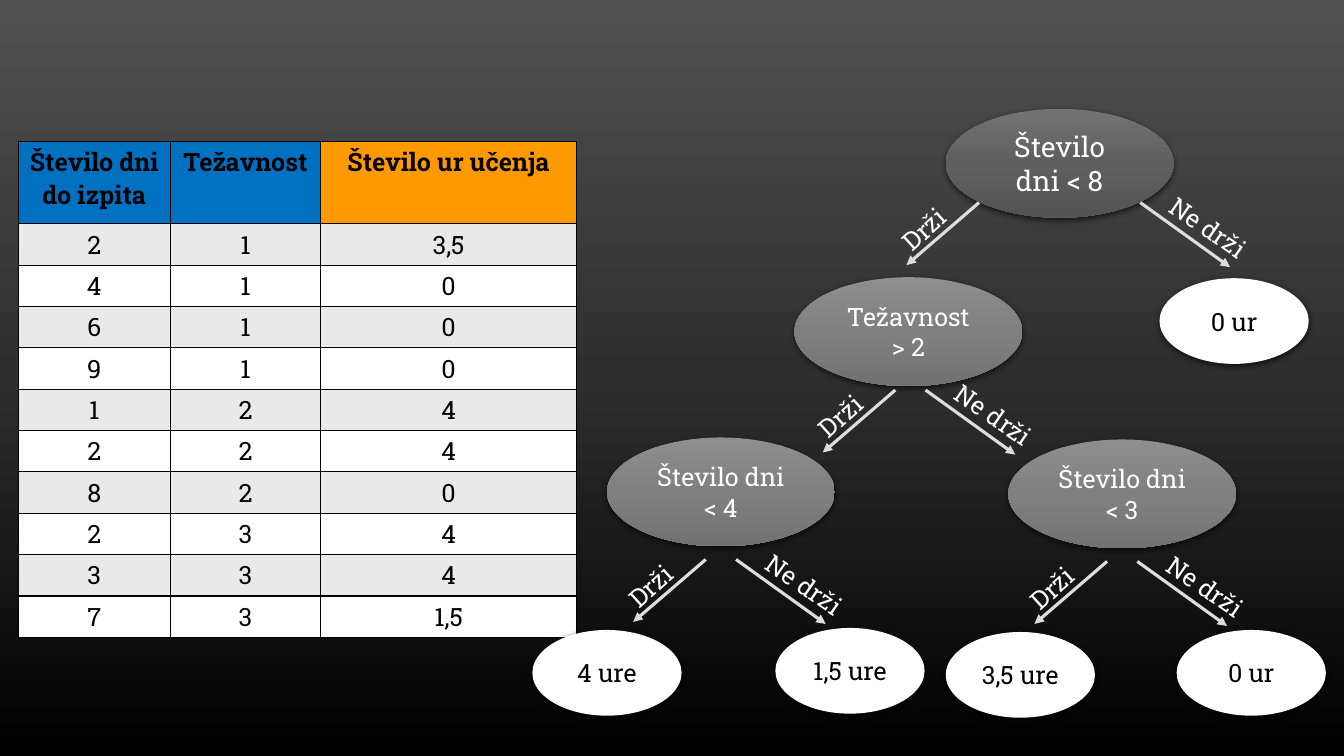
from copy import deepcopy

from lxml import etree
from pptx import Presentation
from pptx.dml.color import RGBColor
from pptx.enum.shapes import MSO_CONNECTOR as LINE, MSO_SHAPE as SHAPE
from pptx.enum.text import MSO_ANCHOR as ANCHOR, MSO_AUTO_SIZE as AUTO, PP_ALIGN as ALIGN
from pptx.oxml import parse_xml
from pptx.oxml.ns import nsdecls, qn
from pptx.util import Inches, Pt

rgb = RGBColor.from_string


def paint_gradient(fill, element, colors):
    """Three-stop gradient from top to bottom."""
    fill.gradient()
    fill.gradient_angle = 270
    stops = next(element.iter(qn("a:gsLst")))
    stops.insert(1, deepcopy(stops[0]))
    for stop, position, color in zip(fill.gradient_stops, (0, 0.5, 1), colors):
        stop.position = position
        stop.color.rgb = rgb(color)


def write(frame, text, color, size=18, align=ALIGN.CENTER, bold=False):
    paragraph = frame.paragraphs[0]
    paragraph.text = text
    paragraph.alignment = align
    font = paragraph.font
    font.name, font.size, font.bold = "Roboto Slab", Pt(size), bold
    font.color.rgb = rgb(color)


deck = Presentation()
deck.slide_width, deck.slide_height = Inches(13.33), Inches(7.5)
slide = deck.slides.add_slide(deck.slide_layouts[6])
paint_gradient(slide.background.fill, slide.element, ("515151", "2E2E2E", "000000"))

# Training data: days to exam, difficulty, hours of study
samples = [
    ("Število dni do izpita", "Težavnost", "Število ur učenja"),
    ("2", "1", "3,5"), ("4", "1", "0"), ("6", "1", "0"), ("9", "1", "0"),
    ("1", "2", "4"), ("2", "2", "4"), ("8", "2", "0"),
    ("2", "3", "4"), ("3", "3", "4"), ("7", "3", "1,5"),
]
header_fills = ("0070C0", "0070C0", "FF9900")
table = slide.shapes.add_table(len(samples), 3, Inches(0.18), Inches(1.4),
                               Inches(5.54), Inches(4.42)).table
for column, width in zip(table.columns, (1.51, 1.49, 2.54)):
    column.width = Inches(width)
for r, sample in enumerate(samples):
    table.rows[r].height = Inches(0.36 if r else 0.82)
    for c, value in enumerate(sample):
        cell = table.cell(r, c)
        cell.margin_left = cell.margin_right = Inches(0.04)
        cell.margin_top = cell.margin_bottom = Inches(0.04)
        write(cell.text_frame, value, "000000", bold=r == 0)
        cell.fill.solid()
        cell.fill.fore_color.rgb = rgb(("FFFFFF", "E9E9E9")[r % 2] if r else header_fills[c])
        for i, side in enumerate("LRTB"):
            cell._tc.get_or_add_tcPr().insert(i, parse_xml(
                f'<a:ln{side} {nsdecls("a")} w="12700"><a:solidFill>'
                f'<a:srgbClr val="000000"/></a:solidFill></a:ln{side}>'))

# Tree nodes: text, left, top; questions are grey, answers white
question_size, answer_size = (2.26, 1.08), (1.48, 0.85)
root_greys = ("737373", "5F5F5F", "545454")
inner_greys = ("8E8E8E", "808080", "727272")
nodes = [
    ("Število dni < 8", 9.38, 1.08, root_greys),
    ("Težavnost > 2", 7.88, 2.75, inner_greys),
    ("Število dni < 4", 6.02, 4.34, inner_greys),
    ("Število dni < 3", 10, 4.36, inner_greys),
    ("4 ure", 5.28, 6.25, None),
    ("1,5 ure", 7.69, 6.23, None),
    ("3,5 ure", 9.38, 6.27, None),
    ("0 ur", 11.67, 6.25, None),
    ("0 ur", 11.5, 2.76, None),
]
for text, left, top, greys in nodes:
    width, height = question_size if greys else answer_size
    node = slide.shapes.add_shape(SHAPE.OVAL, Inches(left), Inches(top),
                                  Inches(width), Inches(height))
    if greys:
        paint_gradient(node.fill, node._element, greys)
    else:
        node.fill.solid()
        node.fill.fore_color.rgb = rgb("FFFFFF")
    node.line.fill.background()
    node.shadow.inherit = False
    node._element.spPr.find(qn("a:effectLst")).append(parse_xml(
        f'<a:outerShdw {nsdecls("a")} blurRad="57150" dist="19050" dir="5400000" '
        'algn="ctr" rotWithShape="0"><a:srgbClr val="000000">'
        '<a:alpha val="63000"/></a:srgbClr></a:outerShdw>'))
    node.text_frame.word_wrap = True
    node.text_frame.vertical_anchor = ANCHOR.MIDDLE
    write(node.text_frame, text, "FFFFFF" if greys else "000000",
          20 if greys is root_greys else 18)

# Branches: arrow run and drop, label offset, label width, label rotation
holds = ("Drži", -0.72, 0.62, -0.89, 0.71, 317.9)
fails = ("Ne drži", 0.89, 0.64, 0.15, 1.06, 34.6)
# Forks: start of the left arrow, start of the right arrow, top
forks = [(9.71, 11.31, 2.01), (8.88, 9.18, 3.87), (7, 7.3, 5.55), (10.98, 11.28, 5.57)]
for left_start, right_start, top in forks:
    for start, branch in ((left_start, holds), (right_start, fails)):
        text, run, drop, offset, width, rotation = branch
        arrow = slide.shapes.add_connector(LINE.STRAIGHT, Inches(start), Inches(top),
                                           Inches(start + run), Inches(top + drop))
        arrow.line.color.rgb = rgb("DDDDDD")
        arrow.line.width = Pt(2.25)
        etree.SubElement(arrow.line._get_or_add_ln(), qn("a:tailEnd"), type="triangle")
        etree.SubElement(arrow._element.spPr, qn("a:effectLst"))
        label = slide.shapes.add_textbox(Inches(start + offset), Inches(top + 0.05),
                                         Inches(width), Inches(0.4))
        label.rotation = rotation
        label.text_frame.word_wrap = False
        label.text_frame.auto_size = AUTO.SHAPE_TO_FIT_TEXT
        write(label.text_frame, text, "FFFFFF", align=ALIGN.LEFT)

deck.save("out.pptx")
